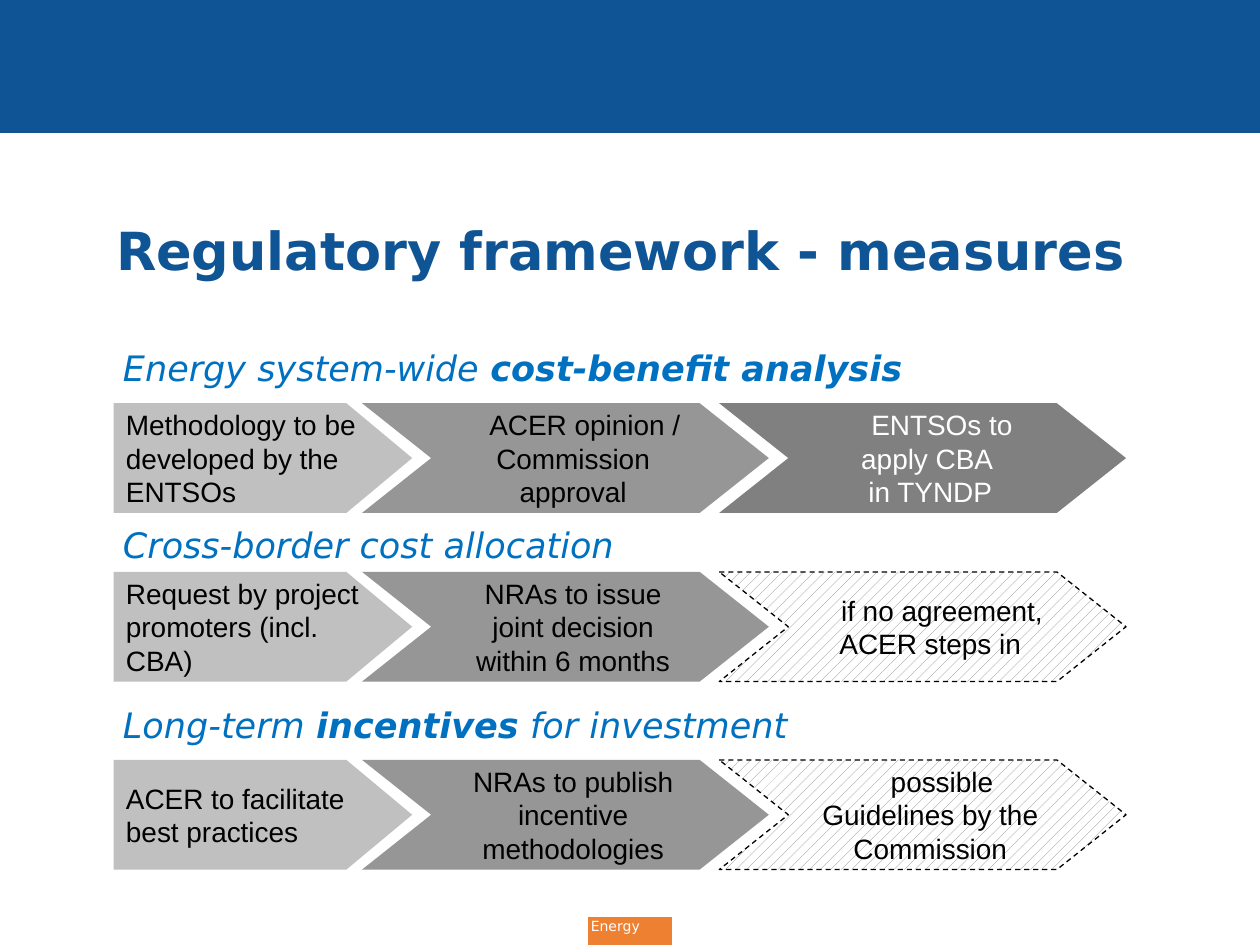
"""Build the slide on regulatory framework measures."""
from dataclasses import dataclass

import pptx
import pptx.dml.color
import pptx.enum.dml
import pptx.enum.shapes
import pptx.enum.text
import pptx.util

Cm = pptx.util.Cm
Pt = pptx.util.Pt
RGBColor = pptx.dml.color.RGBColor
Shape = pptx.enum.shapes.MSO_SHAPE
Align = pptx.enum.text.PP_ALIGN
Anchor = pptx.enum.text.MSO_ANCHOR

NAVY = RGBColor(0x0F, 0x54, 0x94)
BLUE = RGBColor(0x00, 0x70, 0xC0)
ORANGE = RGBColor(0xEE, 0x80, 0x32)
LIGHT = RGBColor(0xC0, 0xC0, 0xC0)
MIDDLE = RGBColor(0x96, 0x96, 0x96)
DARK = RGBColor(0x80, 0x80, 0x80)
BLACK = RGBColor(0, 0, 0)
WHITE = RGBColor(0xFF, 0xFF, 0xFF)

HEADING_FONT = "DejaVu Sans"
STEP_FONT = "Arial"
STEP_HEIGHT = 2.21
FIRST_LINE_INDENT = Cm(0.47)


@dataclass(frozen=True)
class Column:
    left: float
    width: float
    outline: Shape
    point: float
    inset: float
    align: Align
    fill: RGBColor


@dataclass(frozen=True)
class Step:
    text: str
    indented: bool = False
    optional: bool = False
    color: RGBColor = BLACK


@dataclass(frozen=True)
class Measure:
    heading_top: float
    steps_top: float
    heading: tuple[tuple[str, bool], ...]
    steps: tuple[Step, ...]


COLUMNS = (
    Column(2.29, 6.02, Shape.PENTAGON, 0.6, 0.25, Align.LEFT, LIGHT),
    Column(7.3, 8.2, Shape.CHEVRON, 0.63, 0.56, Align.CENTER, MIDDLE),
    Column(14.5, 8.2, Shape.CHEVRON, 0.63, 0.56, Align.CENTER, DARK),
)

MEASURES = (
    Measure(
        6.9, 8.13,
        (("Energy system-wide ", False), ("cost-benefit analysis", True)),
        (
            Step("Methodology to be developed by the ENTSOs"),
            Step("ACER opinion / Commission approval", indented=True),
            Step("ENTSOs to apply CBA \vin TYNDP", indented=True, color=WHITE),
        ),
    ),
    Measure(
        10.47, 11.53,
        (("Cross-border cost allocation", False),),
        (
            Step("Request by project promoters (incl. CBA)"),
            Step("NRAs to issue joint decision within 6 months"),
            Step("if no agreement, ACER steps in", indented=True, optional=True),
        ),
    ),
    Measure(
        14.1, 15.32,
        (("Long-term ", False), ("incentives", True), (" for investment", False)),
        (
            Step("ACER to facilitate best practices"),
            Step("NRAs to publish incentive methodologies"),
            Step("possible Guidelines by the Commission", indented=True, optional=True),
        ),
    ),
)


def style_font(font, name: str, size: float, color: RGBColor,
               bold: bool = False, italic: bool = False) -> None:
    """Set the look of a font."""
    font.name = name
    font.size = Pt(size)
    font.color.rgb = color
    font.bold = bold
    font.italic = italic


def add_block(page, left: float, top: float, width: float, height: float, color: RGBColor):
    """Add a plain rectangle with a matching outline."""
    block = page.shapes.add_shape(Shape.RECTANGLE, Cm(left), Cm(top), Cm(width), Cm(height))
    block.shadow.inherit = False
    block.fill.solid()
    block.fill.fore_color.rgb = color
    block.line.color.rgb = color
    block.line.width = Pt(0.75)
    return block


def add_line_of_text(page, left: float, top: float, width: float, height: float,
                     spans: tuple[tuple[str, bool], ...], size: float,
                     color: RGBColor, italic: bool) -> None:
    """Add a text box holding one line of plain and bold spans."""
    box = page.shapes.add_textbox(Cm(left), Cm(top), Cm(width), Cm(height))
    frame = box.text_frame
    frame.word_wrap = True
    frame.vertical_anchor = Anchor.MIDDLE
    frame.margin_left = frame.margin_right = 0
    frame.margin_top = frame.margin_bottom = 0
    for text, bold in spans:
        span = frame.paragraphs[0].add_run()
        span.text = text
        style_font(span.font, HEADING_FONT, size, color, bold, italic)


def add_step(page, column: Column, top: float, step: Step) -> None:
    """Add one arrow-shaped step of a measure."""
    arrow = page.shapes.add_shape(
        column.outline, Cm(column.left), Cm(top), Cm(column.width), Cm(STEP_HEIGHT))
    arrow.adjustments[0] = column.point
    arrow.shadow.inherit = False
    if step.optional:
        arrow.fill.patterned()
        arrow.fill.pattern = pptx.enum.dml.MSO_PATTERN.PERCENT_20
        arrow.fill.fore_color.rgb = DARK
        arrow.fill.back_color.rgb = WHITE
        arrow.line.color.rgb = BLACK
        arrow.line.width = Pt(0.75)
        arrow.line.dash_style = pptx.enum.dml.MSO_LINE.DASH
    else:
        arrow.fill.solid()
        arrow.fill.fore_color.rgb = column.fill
        arrow.line.fill.background()
    frame = arrow.text_frame
    frame.text = step.text
    frame.word_wrap = True
    frame.vertical_anchor = Anchor.MIDDLE
    frame.margin_left = Cm(column.inset)
    para = frame.paragraphs[0]
    para.alignment = column.align
    if step.indented:
        para._p.get_or_add_pPr().set("indent", str(FIRST_LINE_INDENT))
    for span in para.runs:
        style_font(span.font, STEP_FONT, 16, step.color)


def add_footer(page) -> None:
    """Add the orange label at the bottom edge."""
    label = add_block(page, 11.86, 18.49, 1.68, 0.56, ORANGE)
    frame = label.text_frame
    frame.text = "Energy"
    frame.vertical_anchor = Anchor.TOP
    frame.margin_left = Cm(0.05)
    frame.margin_top = frame.margin_bottom = 0
    para = frame.paragraphs[0]
    para.alignment = Align.LEFT
    style_font(para.runs[0].font, HEADING_FONT, 8, WHITE)


def main() -> None:
    """Build and save the deck."""
    deck = pptx.Presentation()
    deck.slide_width = Cm(25.4)
    deck.slide_height = Cm(19.05)
    page = deck.slides.add_slide(deck.slide_layouts[6])
    add_block(page, 0, 0, 25.4, 2.67, NAVY)
    add_footer(page)
    add_line_of_text(page, 2.34, 3.73, 21.6, 2.6,
                     (("Regulatory framework - measures", True),), 30, NAVY, False)
    for measure in MEASURES:
        add_line_of_text(page, 2.48, measure.heading_top, 21.2, 1,
                         measure.heading, 20, BLUE, True)
        for column, step in zip(COLUMNS, measure.steps):
            add_step(page, column, measure.steps_top, step)
    deck.save("out.pptx")


if __name__ == "__main__":
    main()
